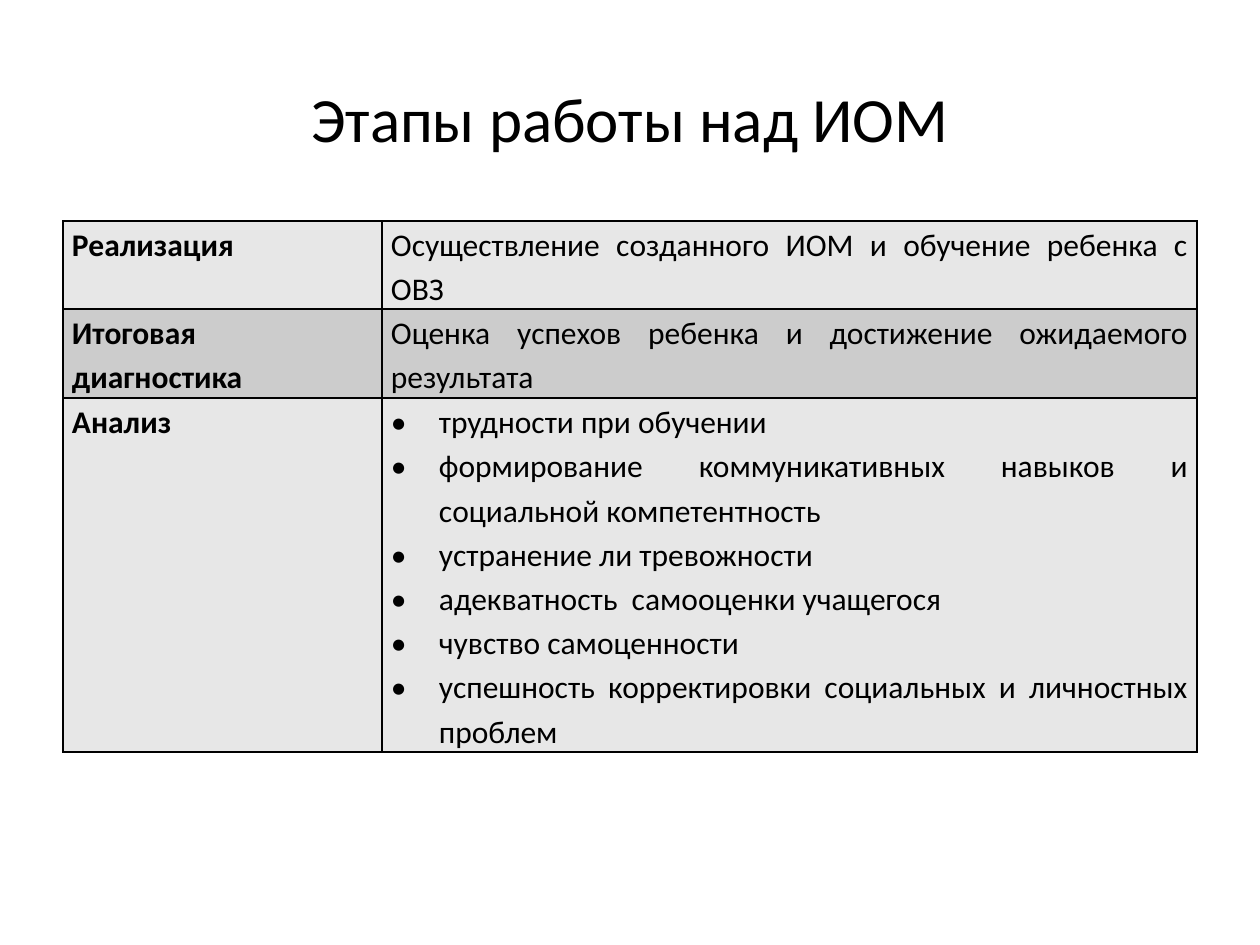
import pptx
import pptx.dml.color
import pptx.enum.text
import pptx.oxml
import pptx.oxml.ns
import pptx.util

SCALE = 914400 // 126
COLORS = {"text": "000000", "border": "000000", "light": "E7E7E7", "dark": "CCCCCC"}
STAGES = [
    ("Реализация", ["Осуществление созданного ИОМ и обучение ребенка с ОВЗ"]),
    ("Итоговая диагностика", ["Оценка успехов ребенка и достижение ожидаемого результата"]),
    ("Анализ", [
        "трудности при обучении",
        "формирование коммуникативных навыков и социальной компетентность",
        "устранение ли тревожности",
        "адекватность  самооценки учащегося",
        "чувство самоценности",
        "успешность корректировки социальных и личностных проблем",
    ]),
]


def px(value):
    return pptx.util.Emu(value * SCALE)


def color(name):
    return pptx.dml.color.RGBColor.from_string(COLORS[name])


class SlideBuilder:
    """Holds the text style and the current slide."""

    def __init__(self, page, font="Calibri"):
        self.page = page
        self.font = font

    def style(self, para, size, align, bold=False):
        para.alignment = align
        para.font.size = pptx.util.Pt(size)
        for span in para.runs:
            span.font.name = self.font
            span.font.size = pptx.util.Pt(size)
            span.font.bold = bold
            span.font.color.rgb = color("text")

    def title(self, text, left, top, width, height):
        box = self.page.shapes.add_textbox(px(left), px(top), px(width), px(height))
        frame = box.text_frame
        frame.word_wrap = True
        frame.vertical_anchor = pptx.enum.text.MSO_ANCHOR.MIDDLE
        frame.text = text
        self.style(frame.paragraphs[0], 36, pptx.enum.text.PP_ALIGN.CENTER)

    def bullet(self, para, indent):
        props = para._p.get_or_add_pPr()
        props.set("marL", str(px(indent)))
        props.set("indent", str(-px(indent)))
        space = pptx.oxml.ns.nsdecls("a")
        marks = (f'<a:buFont {space} typeface="{self.font}"/>', f'<a:buChar {space} char="•"/>')
        for index, mark in enumerate(marks, start=1):
            props.insert(index, pptx.oxml.parse_xml(mark))

    def borders(self, cell):
        props = cell._tc.get_or_add_tcPr()
        for index, side in enumerate(("lnL", "lnR", "lnT", "lnB")):
            line = pptx.oxml.parse_xml(
                f'<a:{side} {pptx.oxml.ns.nsdecls("a")} w="12700"><a:solidFill>'
                f'<a:srgbClr val="{COLORS["border"]}"/></a:solidFill></a:{side}>')
            props.insert(index, line)

    def cell(self, cell, lines, fill, bold):
        cell.margin_left = cell.margin_right = px(9)
        cell.margin_top = cell.margin_bottom = 0
        cell.fill.solid()
        cell.fill.fore_color.rgb = color(fill)
        self.borders(cell)
        cell.text_frame.text = "\n".join(lines)
        for para in cell.text_frame.paragraphs:
            self.style(para, 18, pptx.enum.text.PP_ALIGN.JUSTIFY, bold)
            para.line_spacing = 1.15
            if len(lines) > 1:
                self.bullet(para, 48)

    def table(self, stages, left, top, widths, heights):
        frame = self.page.shapes.add_table(
            len(heights), len(widths), px(left), px(top),
            px(sum(widths)), px(sum(heights)))
        table = frame.table
        for column, width in zip(table.columns, widths):
            column.width = px(width)
        for index, (name, lines) in enumerate(stages):
            fill = "dark" if index % 2 else "light"
            table.rows[index].height = px(heights[index])
            self.cell(table.cell(index, 0), [name], fill, True)
            self.cell(table.cell(index, 1), lines, fill, False)


def main():
    deck = pptx.Presentation()
    deck.slide_width, deck.slide_height = px(1260), px(945)
    builder = SlideBuilder(deck.slides.add_slide(deck.slide_layouts[6]))
    builder.title("Этапы работы над ИОМ", 63, 38, 1134, 158)
    builder.table(STAGES, 63, 221, (319, 815), (88, 89, 354))
    deck.save("out.pptx")


if __name__ == "__main__":
    main()
